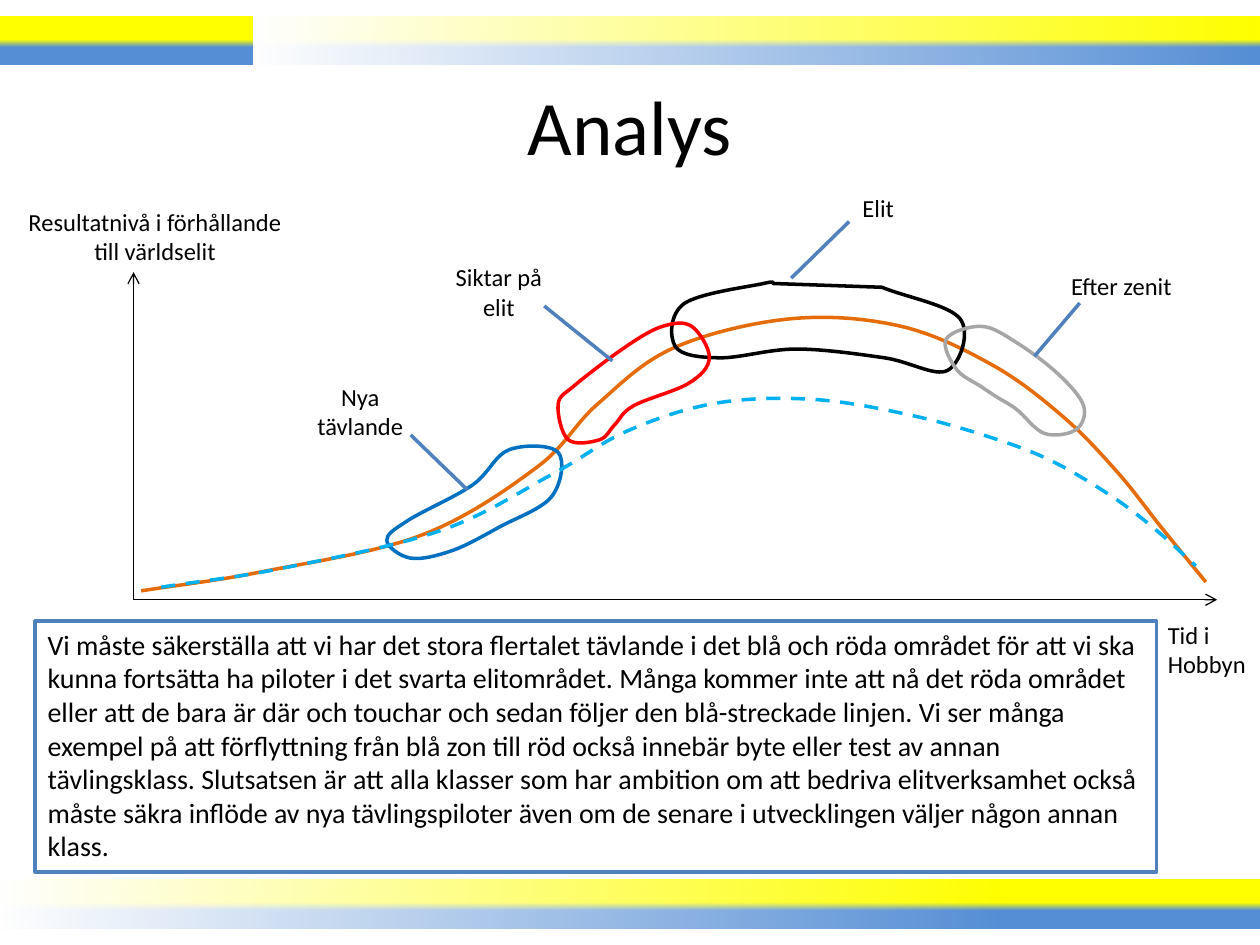
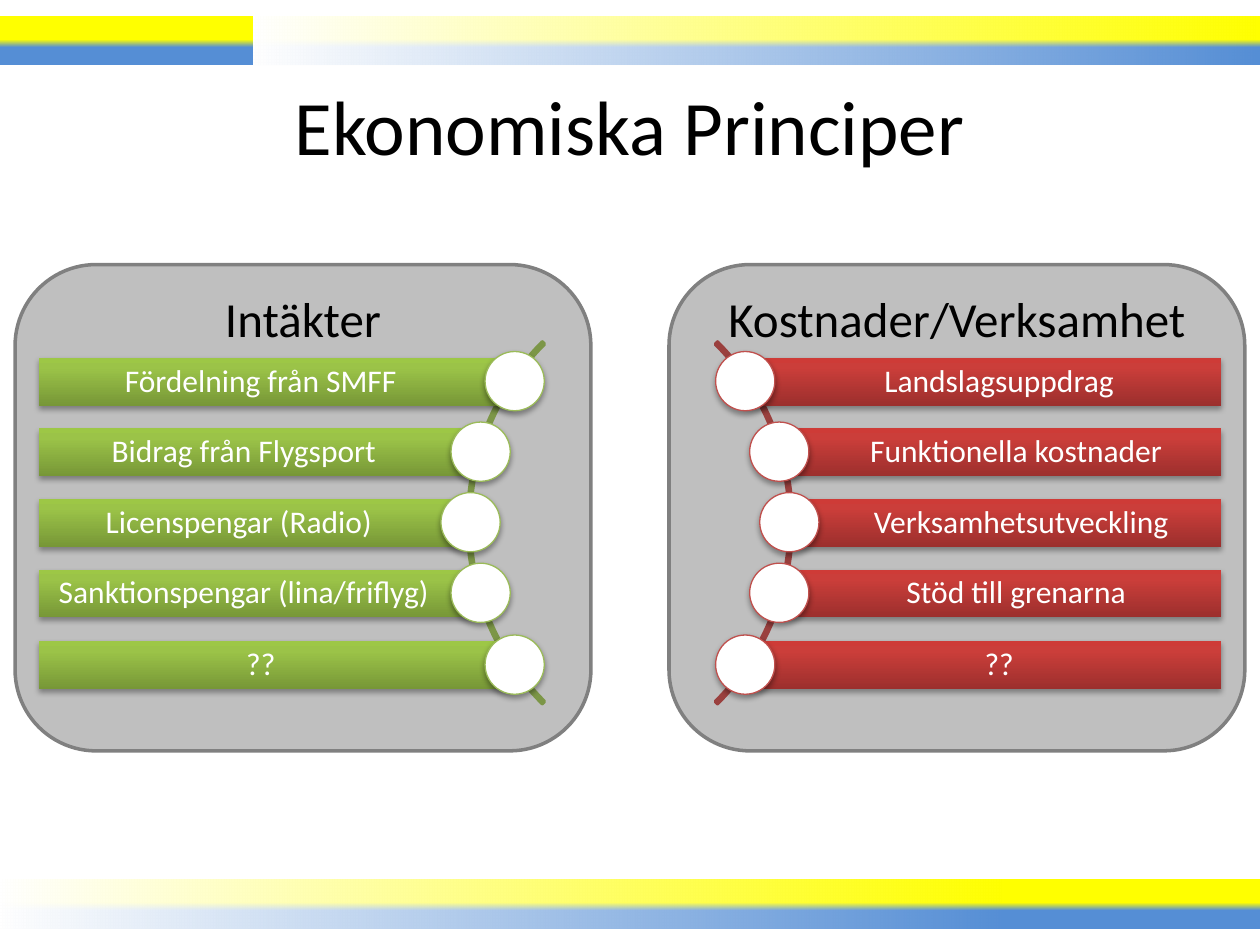
import pptx
import pptx.dml.color
import pptx.enum.dml
import pptx.enum.shapes
import pptx.enum.text
import pptx.oxml
import pptx.oxml.ns
import pptx.util

RGB = pptx.dml.color.RGBColor
SHAPE = pptx.enum.shapes.MSO_SHAPE
ALIGN = pptx.enum.text.PP_ALIGN
ANCHOR = pptx.enum.text.MSO_ANCHOR
qn = pptx.oxml.ns.qn

PX = 9144  # EMU per px, 100 px to the inch
WIDTH, HEIGHT = 1000, 750
FONT = "Calibri"

BLACK = RGB(0x00, 0x00, 0x00)
WHITE = RGB(0xFF, 0xFF, 0xFF)
YELLOW = RGB(0xFF, 0xFF, 0x00)
BAND_BLUE = RGB(0x55, 0x8E, 0xD5)
CALLOUT_BLUE = RGB(0x4F, 0x81, 0xBD)
ORANGE = RGB(0xE4, 0x6C, 0x0A)
ZONE_BLUE = RGB(0x00, 0x70, 0xC0)
ZONE_RED = RGB(0xFF, 0x00, 0x00)
ZONE_GREY = RGB(0xA6, 0xA6, 0xA6)
DASH_BLUE = RGB(0x00, 0xB0, 0xF0)
PANEL = RGB(0xBF, 0xBF, 0xBF)
PANEL_EDGE = RGB(0x80, 0x80, 0x80)
GREEN_ARC = RGB(0x7C, 0x96, 0x47)
GREEN_RING = RGB(0x9B, 0xBB, 0x59)
RED_ARC = RGB(0x9A, 0x40, 0x3E)
RED_RING = RGB(0xC0, 0x50, 0x4D)

# Gradient stops: position in percent, colour, opacity in percent
BAND_STOPS = [(25, YELLOW, 100), (47, YELLOW, 100),
              (63, BAND_BLUE, 100), (79, BAND_BLUE, 100)]
FADE_STOPS = [(0, WHITE, 100), (100, WHITE, 0)]
GREEN_STOPS = [(0, RGB(0x77, 0x97, 0x37), 100), (80, RGB(0x9B, 0xC3, 0x48), 100),
               (100, RGB(0x9D, 0xC7, 0x46), 100)]
RED_STOPS = [(0, RGB(0x9C, 0x2F, 0x2D), 100), (80, RGB(0xCB, 0x3E, 0x3A), 100),
             (100, RGB(0xCE, 0x3B, 0x37), 100)]

PERFORMANCE = [(112, 469), (207, 454), (334, 425), (426, 371), (474, 321), (535, 276),
               (628, 253), (715, 259), (788, 290), (844, 331), (887, 375), (922, 419),
               (957, 462)]
STAGNATION = [(128, 466), (224, 451), (350, 421), (439, 376), (498, 342), (568, 320),
              (646, 317), (725, 330), (792, 349), (837, 367), (884, 395), (918, 421),
              (949, 449)]
ELITE = [(700, 228), (762, 253), (752, 294), (702, 284), (632, 277), (571, 284),
         (536, 275), (543, 241), (606, 225), (614, 225)]
NEWCOMERS = [(324, 413), (375, 385), (404, 357), (443, 359), (438, 394), (397, 418),
             (359, 437), (326, 443), (307, 429)]
ASPIRING = [(456, 306), (497, 275), (526, 259), (549, 259), (563, 284), (547, 304),
            (503, 322), (488, 337), (476, 349), (451, 349), (443, 321)]
PAST_ZENITH = [(807, 272), (840, 297), (860, 322), (854, 341), (829, 344), (807, 325),
               (791, 315), (779, 307), (759, 293), (751, 269), (779, 259)]

CALLOUTS = [
    ("Elit", 647, 131, (0.67, 0.27, 1.34, -0.19)),
    ("Nya tävlande", 236, 293, (0.78, 0.9, 1.43, 1.35)),
    ("Siktar på elit", 346, 198, (0.67, 0.86, 1.32, 1.4)),
    ("Efter zenit", 840, 193, (0.71, 0.17, 1.34, -0.19)),
]
CONCLUSION = (
    "Vi måste säkerställa att vi har det stora flertalet tävlande i det blå och röda "
    "området för att vi ska kunna fortsätta ha piloter i det svarta elitområdet. Många "
    "kommer inte att nå det röda området eller att de bara är där och touchar och sedan "
    "följer den blå-streckade linjen. Vi ser många exempel på att förflyttning från blå "
    "zon till röd också innebär byte eller test av annan tävlingsklass. Slutsatsen är att "
    "alla klasser som har ambition om att bedriva elitverksamhet också måste säkra "
    "inflöde av nya tävlingspiloter även om de senare i utvecklingen väljer någon annan "
    "klass.")
INCOME = ["Fördelning från SMFF", "Bidrag från Flygsport", "Licenspengar (Radio)",
          "Sanktionspengar (lina/friflyg)", "??"]
COSTS = ["Landslagsuppdrag", "Funktionella kostnader", "Verksamhetsutveckling",
         "Stöd till grenarna", "??"]
BAR_WIDTHS = [377, 350, 342, 350, 377]


def px(*lengths):
    return [round(n * PX) for n in lengths]


def dml(xml):
    """Parse one DrawingML element."""
    return pptx.oxml.parse_xml(f"<a:wrap {pptx.oxml.ns.nsdecls('a')}>{xml}</a:wrap>")[0]


def write(s, text, size=14, color=BLACK, align=ALIGN.CENTER, anchor=ANCHOR.MIDDLE,
          insets=(10, 5, 10, 5), wrap=True, spacing=None):
    tf = s.text_frame
    tf.word_wrap = wrap
    tf.vertical_anchor = anchor
    tf.margin_left, tf.margin_top, tf.margin_right, tf.margin_bottom = px(*insets)
    p = tf.paragraphs[0]
    p.text = text
    p.alignment = align
    p.line_spacing = spacing
    for r in p.runs:
        r.font.name = FONT
        r.font.size = pptx.util.Pt(size)
        r.font.color.rgb = color


def label(slide, text, x, y, w, h, **fmt):
    write(slide.shapes.add_textbox(*px(x, y, w, h)), text, **fmt)


def outline(s, color, width):
    if color is None:
        s.line.fill.background()
    else:
        s.line.color.rgb = color
        s.line.width = pptx.util.Pt(width)


def gradient(s, stops, angle):
    gs = "".join(
        f'<a:gs pos="{pos * 1000}"><a:srgbClr val="{color}">'
        f'<a:alpha val="{alpha * 1000}"/></a:srgbClr></a:gs>'
        for pos, color, alpha in stops)
    s._element.spPr.find(qn("a:prstGeom")).addnext(dml(
        f'<a:gradFill rotWithShape="1"><a:gsLst>{gs}</a:gsLst>'
        f'<a:lin ang="{angle * 60000}" scaled="0"/></a:gradFill>'))


def box(slide, kind, x, y, w, h, fill=None, angle=90, line=None, width=2, shadow=False):
    """Add a preset shape; fill is a colour, a list of gradient stops or None."""
    s = slide.shapes.add_shape(kind, *px(x, y, w, h))
    if isinstance(fill, list):
        gradient(s, fill, angle)
    elif fill is None:
        s.fill.background()
    else:
        s.fill.solid()
        s.fill.fore_color.rgb = fill
    outline(s, line, width)
    s.shadow.inherit = False
    if shadow:
        s._element.spPr.find(qn("a:effectLst")).append(dml(
            '<a:outerShdw blurRad="40000" dist="23000" dir="5400000" rotWithShape="0">'
            '<a:srgbClr val="000000"><a:alpha val="35000"/></a:srgbClr></a:outerShdw>'))
    return s


def axis(slide, x, y):
    """Draw an arrow from the origin of the diagram to (x, y)."""
    c = slide.shapes.add_connector(
        pptx.enum.shapes.MSO_CONNECTOR.STRAIGHT, *px(106, 476, x, y))
    outline(c, BLACK, 0.75)
    c.line._get_or_add_ln().append(dml('<a:tailEnd type="arrow"/>'))
    c._element.spPr.append(dml("<a:effectLst/>"))


def curve(slide, anchors, color, closed=False, smooth_loop=True, dashed=False):
    """Draw a smooth line through anchors; a loop that is not smooth closes straight."""
    pts = [tuple(px(*a)) for a in anchors]
    n = len(pts)
    loop = closed and smooth_loop
    builder = slide.shapes.build_freeform(*pts[0], scale=1.0)
    builder.add_line_segments(pts[1:] + pts[:1] * loop, close=closed)
    s = builder.convert_to_shape()
    s.fill.background()
    outline(s, color, 2)
    s.shadow.inherit = False
    if dashed:
        s.line.dash_style = pptx.enum.dml.MSO_LINE.DASH

    def tangent(i):
        if loop:
            before, after, part = pts[(i - 1) % n], pts[(i + 1) % n], 6
        else:
            before, after = pts[max(i - 1, 0)], pts[min(i + 1, n - 1)]
            part = 6 if 0 < i < n - 1 else 3
        return [(b - a) / part for a, b in zip(before, after)]

    for i, straight in enumerate(list(s._element.iter(qn("a:lnTo")))):
        j = (i + 1) % n
        (x0, y0), (x1, y1) = pts[i], pts[j]
        (dx0, dy0), (dx1, dy1) = tangent(i), tangent(j)
        bezier = [(x0 + dx0, y0 + dy0), (x1 - dx1, y1 - dy1), (x1, y1)]
        xml = "".join(f'<a:pt x="{round(x - s.left)}" y="{round(y - s.top)}"/>'
                      for x, y in bezier)
        straight.getparent().replace(
            straight, dml(f"<a:cubicBezTo>{xml}</a:cubicBezTo>"))


def band(slide, y, fade_x):
    box(slide, SHAPE.RECTANGLE, 0, y, WIDTH, 39, fill=BAND_STOPS)
    box(slide, SHAPE.RECTANGLE, fade_x, y, 799, 39, fill=FADE_STOPS, angle=0)


def new_slide(prs, title):
    slide = prs.slides.add_slide(prs.slide_layouts[6])
    band(slide, 698, 0)
    band(slide, 13, 201)
    label(slide, title, 50, 52, 900, 94, size=44)
    return slide


def analysis_slide(prs):
    slide = new_slide(prs, "Analys")
    axis(slide, 106, 216)
    axis(slide, 966, 476)
    curve(slide, PERFORMANCE, ORANGE)
    label(slide, "Tid i Hobbyn", 917, 487, 83, 57, align=ALIGN.LEFT, anchor=ANCHOR.TOP)
    label(slide, "Resultatnivå i förhållande\vtill världselit", 9, 159, 228, 57,
          anchor=ANCHOR.TOP, wrap=False)
    curve(slide, ELITE, BLACK, closed=True, smooth_loop=False)
    for zone, color in ((NEWCOMERS, ZONE_BLUE), (ASPIRING, ZONE_RED),
                        (PAST_ZENITH, ZONE_GREY)):
        curve(slide, zone, color, closed=True)
    for text, x, y, pointer in CALLOUTS:
        s = box(slide, SHAPE.LINE_CALLOUT_1_NO_BORDER, x, y, 100, 67,
                fill=WHITE, line=CALLOUT_BLUE)
        for i, value in enumerate(pointer):
            s.adjustments[i] = value
        write(s, text)
    s = box(slide, SHAPE.RECTANGLE, 28, 493, 890, 199, fill=WHITE, line=CALLOUT_BLUE)
    write(s, CONCLUSION, size=16, align=ALIGN.LEFT, anchor=ANCHOR.TOP)
    curve(slide, STAGNATION, DASH_BLUE, dashed=True)


def money_panel(slide, heading, items, stops, arc_color, ring_color, arc, mirrored=False):
    """Draw a panel of bars that end on an arc; mirrored puts it on the right half."""
    def place(x, w):
        return WIDTH - x - w if mirrored else x

    s = box(slide, SHAPE.ROUNDED_RECTANGLE, place(12, 457), 210, 457, 386,
            fill=PANEL, line=PANEL_EDGE)
    write(s, heading, size=28, anchor=ANCHOR.TOP, insets=(10, 0, 10, 5))
    s = box(slide, SHAPE.BLOCK_ARC, place(371, 406), 212, 406, 406, line=arc_color)
    for i, value in enumerate(arc):
        s.adjustments[i] = value
    insets = (30, 5, 5, 5) if mirrored else (5, 5, 30, 5)
    for i, (text, w) in enumerate(zip(items, BAR_WIDTHS)):
        y = 284 + i * 225 // 4
        s = box(slide, SHAPE.RECTANGLE, place(31, w), y, w, 38,
                fill=stops, angle=270, shadow=True)
        write(s, text, size=18, color=WHITE, insets=insets, spacing=0.9)
        box(slide, SHAPE.OVAL, place(8 + w, 47), y - 5, 47, 47,
            fill=WHITE, line=ring_color, width=0.75, shadow=True)


def economy_slide(prs):
    slide = new_slide(prs, "Ekonomiska Principer")
    money_panel(slide, "Intäkter", INCOME, GREEN_STOPS, GREEN_ARC, GREEN_RING,
                (81, 135, 0.006))
    money_panel(slide, "Kostnader/Verksamhet", COSTS, RED_STOPS, RED_ARC, RED_RING,
                (189, 27, 0.006), mirrored=True)


def main():
    prs = pptx.Presentation()
    prs.slide_width, prs.slide_height = px(WIDTH, HEIGHT)
    analysis_slide(prs)
    economy_slide(prs)
    prs.save("out.pptx")


if __name__ == "__main__":
    main()
